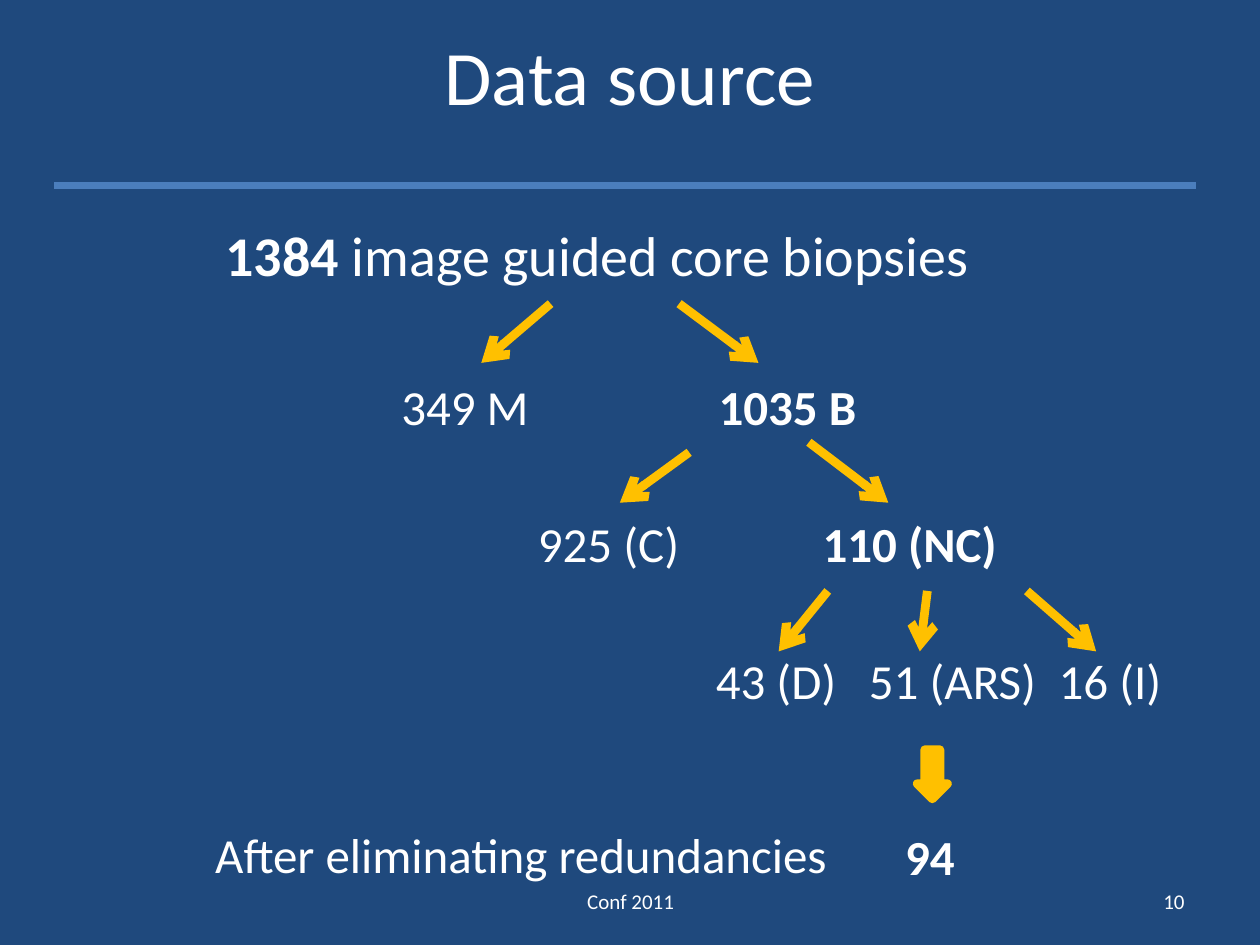
from lxml.etree import SubElement
from pptx import Presentation
from pptx.dml.color import RGBColor
from pptx.enum.shapes import MSO_CONNECTOR, MSO_SHAPE
from pptx.enum.text import MSO_ANCHOR, PP_ALIGN
from pptx.oxml.ns import qn
from pptx.util import Inches, Pt

NAVY = RGBColor(0x1F, 0x49, 0x7D)
WHITE = RGBColor(0xFF, 0xFF, 0xFF)
AMBER = RGBColor(0xFF, 0xC0, 0x00)
RULE_BLUE = RGBColor(0x4B, 0x7E, 0xBC)

presentation = Presentation()
presentation.slide_width = Inches(10)
presentation.slide_height = Inches(7.5)
slide = presentation.slides.add_slide(presentation.slide_layouts[6])
slide.background.fill.solid()
slide.background.fill.fore_color.rgb = NAVY


def add_text(text, left, top, width, height, size=28, bold_part="",
             align=PP_ALIGN.CENTER, wrap=True, side_margin=0.1):
    """Add a text box; bold_part is set in bold ahead of text."""
    shape = slide.shapes.add_textbox(
        Inches(left), Inches(top), Inches(width), Inches(height))
    frame = shape.text_frame
    frame.word_wrap = wrap
    frame.margin_left = frame.margin_right = Inches(side_margin)
    frame.vertical_anchor = MSO_ANCHOR.MIDDLE
    paragraph = frame.paragraphs[0]
    paragraph.alignment = align
    for part, bold in ((bold_part, True), (text, False)):
        if part:
            run = paragraph.add_run()
            run.text = part
            run.font.name = "Calibri"
            run.font.size = Pt(size)
            run.font.bold = bold
            run.font.color.rgb = WHITE


def add_line(start_x, start_y, end_x, end_y, color, width, arrow=False):
    connector = slide.shapes.add_connector(
        MSO_CONNECTOR.STRAIGHT, Inches(start_x), Inches(start_y),
        Inches(end_x), Inches(end_y))
    connector.line.color.rgb = color
    connector.line.width = Pt(width)
    if arrow:
        SubElement(connector.line._get_or_add_ln(), qn("a:tailEnd"), type="arrow")
    SubElement(connector._element.spPr, qn("a:effectLst"))


# Title and rule
add_text("Data source", 0.5, -0.03, 9, 1.25, size=44)
add_line(0.43, 1.47, 9.49, 1.47, RULE_BLUE, 4)

# Tree of biopsy counts: centre x, centre y, width, bold part, text
add_text(" image guided core biopsies", 1.64, 1.7, 6.2, 0.64,
         size=32, bold_part="1384")
counts = [
    (3.69, 3.22, 1.3, "", "349 M"),
    (6.25, 3.22, 1.3, "1035 B", ""),
    (4.83, 4.31, 1.4, "", "925 (C)"),
    (7.22, 4.31, 1.6, "110 (NC)", ""),
    (6.16, 5.40, 1.2, "", "43 (D)"),
    (7.56, 5.40, 1.5, "", "51 (ARS)"),
    (8.81, 5.40, 1.0, "", "16 (I)"),
]
for center_x, center_y, width, bold_part, text in counts:
    add_text(text, center_x - width / 2, center_y - 0.28, width, 0.56,
             bold_part=bold_part, wrap=False, side_margin=0)

# Branch arrows
branches = [
    (4.37, 2.41, 3.82, 2.88),
    (5.39, 2.41, 6.02, 2.88),
    (6.42, 3.51, 7.05, 3.99),
    (5.47, 3.59, 4.92, 3.99),
    (6.57, 4.69, 6.18, 5.17),
    (7.36, 4.69, 7.30, 5.17),
    (8.15, 4.69, 8.70, 5.17),
]
for branch in branches:
    add_line(*branch, AMBER, 5, arrow=True)

# Block arrow to the final count
block_arrow = slide.shapes.add_shape(
    MSO_SHAPE.DOWN_ARROW, Inches(7.28), Inches(5.95), Inches(0.24), Inches(0.39))
block_arrow.shadow.inherit = False
block_arrow.fill.solid()
block_arrow.fill.fore_color.rgb = AMBER
block_arrow.line.color.rgb = AMBER
block_arrow.line.width = Pt(5)

# Final count
add_text("", 7.08, 6.51, 0.6, 0.57, bold_part="94", wrap=False)
add_text("After eliminating redundancies", 1.61, 6.49, 5.12, 0.57,
         align=PP_ALIGN.LEFT, wrap=False)

# Footer
add_text("Conf 2011", 3.42, 6.95, 3.17, 0.4, size=12)
add_text("10", 7.17, 6.95, 2.33, 0.4, size=12, align=PP_ALIGN.RIGHT)

presentation.save("out.pptx")
